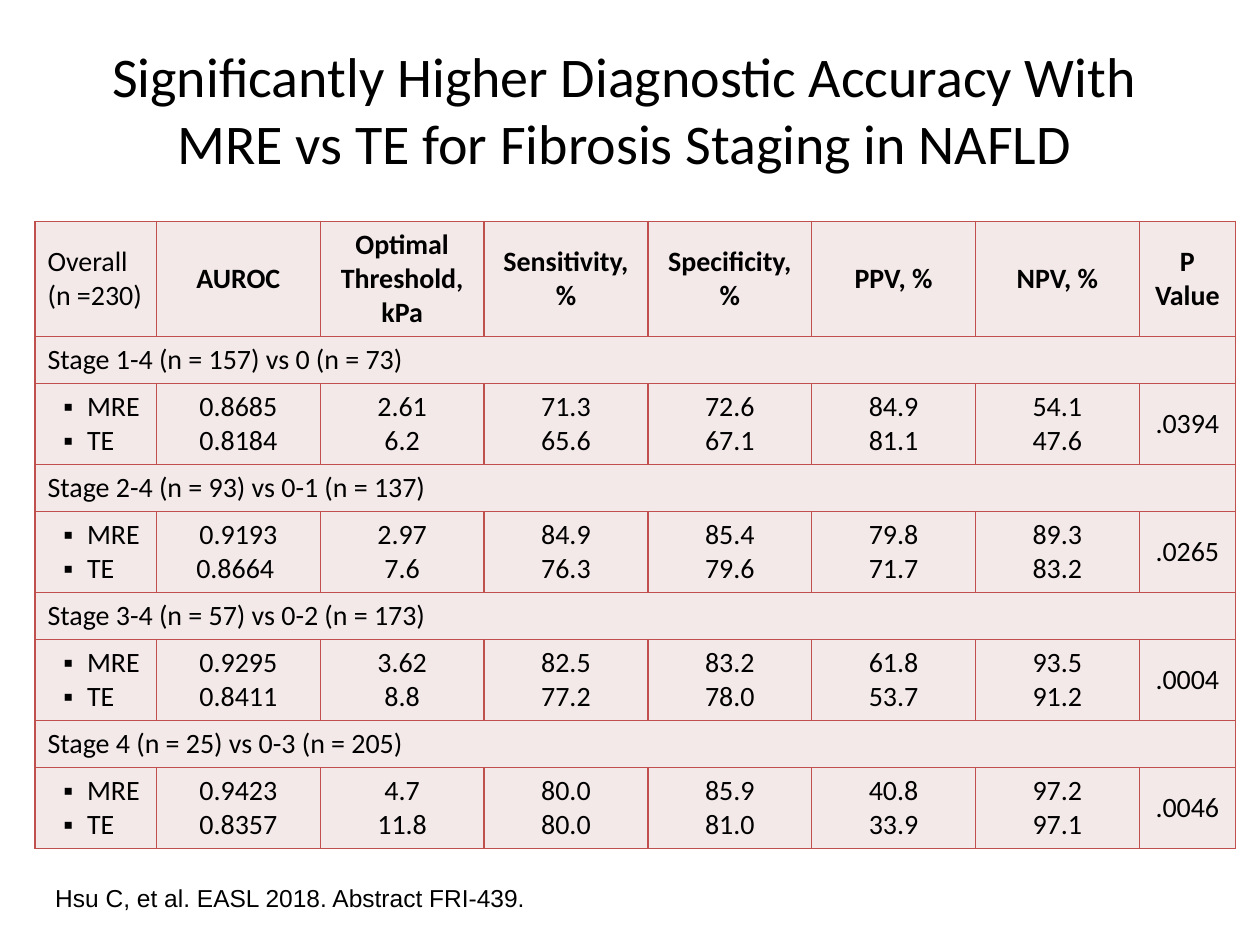
from lxml.etree import SubElement
from pptx import Presentation
from pptx.dml.color import RGBColor
from pptx.enum.text import MSO_ANCHOR as Anchor, MSO_AUTO_SIZE as AutoSize, PP_ALIGN as Align
from pptx.oxml.ns import qn
from pptx.util import Pt

BLACK = RGBColor(0x00, 0x00, 0x00)
RED = RGBColor(0xC0, 0x50, 0x4D)
BLUSH = RGBColor(0xF4, 0xE9, 0xE9)

TITLE = "Significantly Higher Diagnostic Accuracy With MRE vs TE for Fibrosis Staging in NAFLD"
CITATION = "Hsu C, et al. EASL 2018. Abstract FRI-439."

HEADERS = ["AUROC", "Optimal Threshold, kPa", "Sensitivity, %", "Specificity, %",
           "PPV, %", "NPV, %", "P Value"]
METHODS = ["MRE", "TE"]
# Stage comparison, MRE values, TE values, P value
STAGES = [
    ("Stage 1-4 (n = 157) vs 0 (n = 73)",
     ["0.8685", "2.61", "71.3", "72.6", "84.9", "54.1"],
     ["0.8184", "6.2", "65.6", "67.1", "81.1", "47.6"], ".0394"),
    ("Stage 2-4 (n = 93) vs 0-1 (n = 137)",
     ["0.9193", "2.97", "84.9", "85.4", "79.8", "89.3"],
     ["0.8664 ", "7.6", "76.3", "79.6", "71.7", "83.2"], ".0265"),
    ("Stage 3-4 (n = 57) vs 0-2 (n = 173)",
     ["0.9295", "3.62", "82.5", "83.2", "61.8", "93.5"],
     ["0.8411", "8.8", "77.2", "78.0", "53.7", "91.2"], ".0004"),
    ("Stage 4 (n = 25) vs 0-3 (n = 205)",
     ["0.9423", "4.7", "80.0", "85.9", "40.8", "97.2"],
     ["0.8357", "11.8", "80.0", "81.0", "33.9", "97.1"], ".0046"),
]
COL_WIDTHS = [69.4] + [93.6] * 6 + [55]
ROW_HEIGHTS = [54.7] + [22.3, 38.9] * len(STAGES)


def place(sp, box):
    sp.left, sp.top, sp.width, sp.height = (Pt(v) for v in box)


def write(tf, lines, size, font="Calibri", align=Align.LEFT, bold=False, bullet=False):
    for i, line in enumerate(lines):
        p = tf.paragraphs[0] if i == 0 else tf.add_paragraph()
        p.alignment = align
        if bullet:
            add_bullet(p)
        r = p.add_run()
        r.text = line
        r.font.name, r.font.size, r.font.bold = font, Pt(size), bold
        r.font.color.rgb = BLACK


def add_bullet(p):
    pPr = p._p.get_or_add_pPr()
    pPr.set("marL", str(Pt(22.5)))
    pPr.set("indent", str(Pt(-13.5)))
    color = SubElement(pPr, qn("a:buClr"))
    SubElement(color, qn("a:srgbClr"), val=str(BLACK))
    SubElement(pPr, qn("a:buFont"), typeface="Arial")
    SubElement(pPr, qn("a:buChar"), char="▪")


def format_cell(cell):
    tcPr = cell._tc.get_or_add_tcPr()
    for side in ("lnL", "lnR", "lnT", "lnB"):
        ln = SubElement(tcPr, qn(f"a:{side}"), w=str(Pt(1)))
        fill = SubElement(ln, qn("a:solidFill"))
        SubElement(fill, qn("a:srgbClr"), val=str(RED))
    cell.fill.solid()
    cell.fill.fore_color.rgb = BLUSH
    cell.vertical_anchor = Anchor.MIDDLE
    cell.margin_left = cell.margin_right = Pt(7.2)
    cell.margin_top = cell.margin_bottom = Pt(3.6)


def add_title(slide, box):
    sp = slide.shapes.title
    place(sp, box)
    tf = sp.text_frame
    tf.word_wrap = True
    tf.auto_size = AutoSize.NONE
    tf.vertical_anchor = Anchor.MIDDLE
    write(tf, [TITLE], 32, align=Align.CENTER)


def add_accuracy_table(slide, box):
    frame = slide.shapes.add_table(len(ROW_HEIGHTS), len(COL_WIDTHS), *(Pt(v) for v in box))
    table = frame.table
    table.first_row = table.horz_banding = False
    for col, width in zip(table.columns, COL_WIDTHS):
        col.width = Pt(width)
    for row, height in zip(table.rows, ROW_HEIGHTS):
        row.height = Pt(height)
    place(frame, box)
    for cell in table.iter_cells():
        format_cell(cell)

    # Header row
    write(table.cell(0, 0).text_frame, ["Overall", "(n =230)"], 16)
    for c, header in enumerate(HEADERS, 1):
        write(table.cell(0, c).text_frame, [header], 16, align=Align.CENTER, bold=True)

    # A full-width stage row, then its MRE and TE values
    last = len(COL_WIDTHS) - 1
    for i, (stage, mre, te, p_value) in enumerate(STAGES):
        top = 1 + 2 * i
        table.cell(top, 0).merge(table.cell(top, last))
        write(table.cell(top, 0).text_frame, [stage], 16)
        write(table.cell(top + 1, 0).text_frame, METHODS, 16, bullet=True)
        for c, values in enumerate([*zip(mre, te), [p_value]], 1):
            write(table.cell(top + 1, c).text_frame, values, 16, align=Align.CENTER)


def add_citation(slide, box):
    tf = slide.shapes.add_textbox(*(Pt(v) for v in box)).text_frame
    tf.word_wrap = True
    tf.auto_size = AutoSize.SHAPE_TO_FIT_TEXT
    tf.vertical_anchor = Anchor.BOTTOM
    write(tf, [CITATION], 14, font="Arial")


def main():
    prs = Presentation()
    prs.slide_width, prs.slide_height = Pt(720), Pt(540)
    slide = prs.slides.add_slide(prs.slide_layouts[5])
    add_accuracy_table(slide, (20, 126.5, 686, 353))
    add_title(slide, (36, 18.5, 642, 87))
    add_citation(slide, (24.5, 500.5, 473, 24.5))
    prs.save("out.pptx")


if __name__ == "__main__":
    main()
